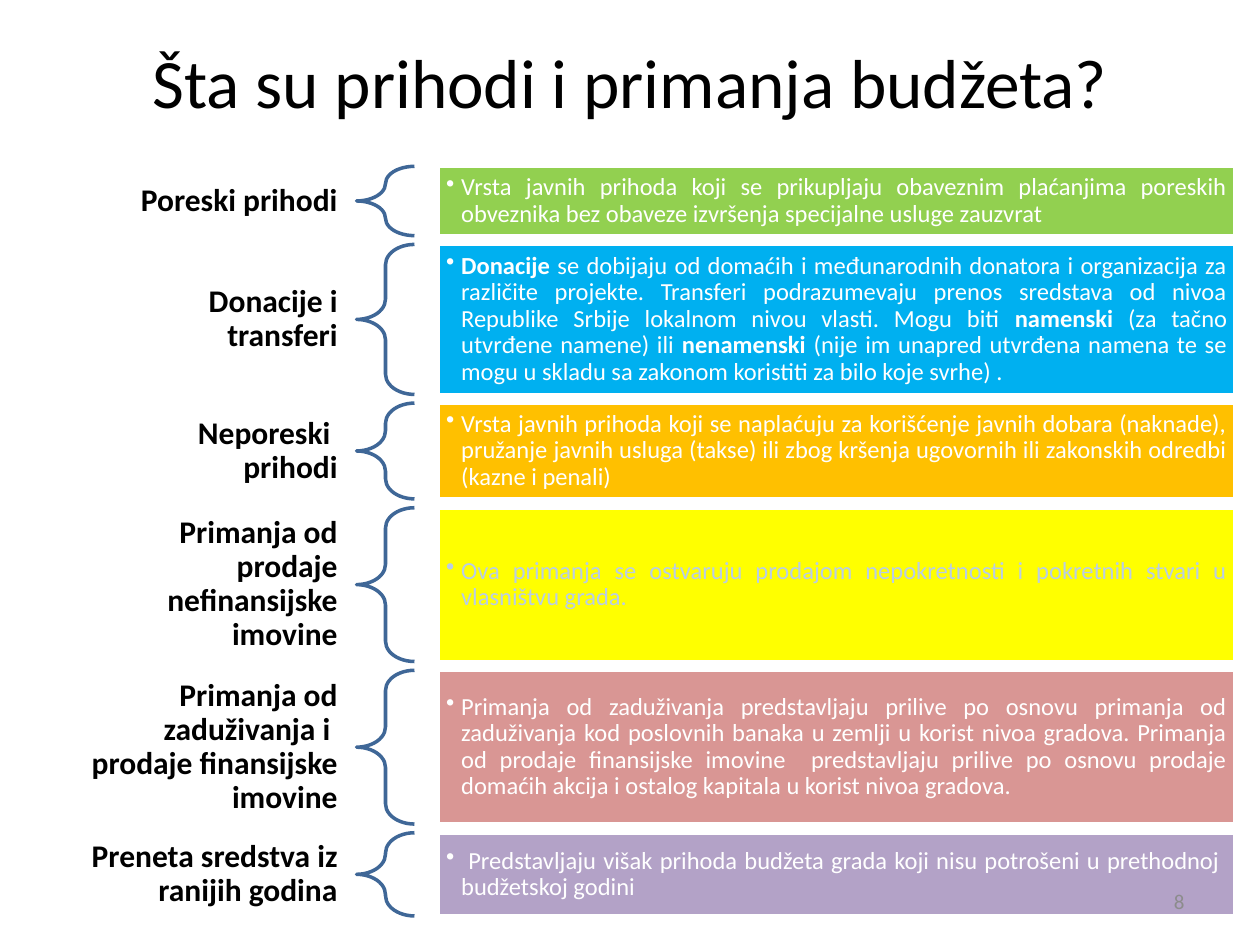
from dataclasses import dataclass

import pptx
import pptx.dml.color
import pptx.enum.shapes
import pptx.enum.text
import pptx.oxml
import pptx.oxml.ns
import pptx.util

Inches = pptx.util.Inches
Pt = pptx.util.Pt
Align = pptx.enum.text.PP_ALIGN
Shape = pptx.enum.shapes.MSO_SHAPE

FONT = "Calibri"
TOP, GAP = 1.32, 0.07
COLORS = {
    "black": "000000", "white": "FFFFFF", "gray": "8C8C8C",
    "brace": "3F6797", "pale": "B9CDE5",
    "green": "92D050", "blue": "00B0F0", "orange": "FFC000",
    "yellow": "FFFF00", "rose": "D99694", "violet": "B3A2C7",
}


@dataclass
class Band:
    label: list[str]
    tall: float  # label height
    high: float  # band height
    fill: str
    runs: list[tuple[str, bool]]
    ink: str = "white"


BANDS = [
    Band(["Poreski prihodi"], 0.39, 0.55, "green", [
        ("Vrsta javnih prihoda koji se prikupljaju obaveznim plaćanjima poreskih "
         "obveznika bez obaveze izvršenja specijalne usluge zauzvrat", False)]),
    Band(["Donacije i", "transferi"], 0.66, 1.19, "blue", [
        ("Donacije", True),
        (" se dobijaju od domaćih i međunarodnih donatora i organizacija za "
         "različite projekte. Transferi podrazumevaju prenos sredstava od nivoa "
         "Republike Srbije lokalnom nivou vlasti. Mogu biti ", False),
        ("namenski", True),
        (" (za tačno utvrđene namene) ili ", False),
        ("nenamenski ", True),
        ("(nije im unapred utvrđena namena te se mogu u skladu sa zakonom "
         "koristiti za bilo koje svrhe) .", False)]),
    Band(["Neporeski ", "prihodi"], 0.66, 0.76, "orange", [
        ("Vrsta javnih prihoda koji se naplaćuju za korišćenje javnih dobara "
         "(naknade), pružanje javnih usluga (takse) ili zbog kršenja ugovornih "
         "ili zakonskih odredbi (kazne i penali)", False)]),
    Band(["Primanja od prodaje nefinansijske imovine"], 1.22, 1.22, "yellow", [
        ("Ova primanja se ostvaruju prodajom nepokretnosti i pokretnih stvari u "
         "vlasništvu grada.", False)], "pale"),
    Band(["Primanja od zaduživanja i  prodaje finansijske imovine"], 1.22, 1.22, "rose", [
        ("Primanja od zaduživanja predstavljaju prilive po osnovu primanja od "
         "zaduživanja kod poslovnih banaka u zemlji u korist nivoa gradova. "
         "Primanja od prodaje finansijske imovine  predstavljaju prilive po "
         "osnovu prodaje domaćih akcija i ostalog kapitala u korist nivoa "
         "gradova.", False)]),
    Band(["Preneta sredstva iz ranijih godina"], 0.66, 0.66, "violet", [
        (" Predstavljaju višak prihoda budžeta grada koji nisu potrošeni u "
         "prethodnoj  budžetskoj godini", False)]),
]


def rgb(name: str) -> pptx.dml.color.RGBColor:
    return pptx.dml.color.RGBColor.from_string(COLORS[name])


def box(left: float, top: float, width: float, height: float) -> list[int]:
    return [Inches(n) for n in (left, top, width, height)]


def setup(frame, align, inset: tuple[float, float] = (0.1, 0.05)):
    """Prepare a text frame and return its first paragraph."""
    frame.word_wrap = True
    frame.auto_size = pptx.enum.text.MSO_AUTO_SIZE.NONE
    frame.vertical_anchor = pptx.enum.text.MSO_ANCHOR.MIDDLE
    frame.margin_left = frame.margin_right = Inches(inset[0])
    frame.margin_top = frame.margin_bottom = Inches(inset[1])
    para = frame.paragraphs[0]
    para.alignment = align
    return para


def write(para, text: str, size: float, ink: str, bold: bool = False) -> None:
    run = para.add_run()
    run.text = text
    run.font.name = FONT
    run.font.size = Pt(size)
    run.font.bold = bold
    run.font.color.rgb = rgb(ink)


def bullet(para) -> None:
    props = para._p.get_or_add_pPr()
    props.set("marL", str(Inches(0.12)))
    props.set("indent", str(Inches(-0.12)))
    mark = pptx.oxml.parse_xml(
        f'<a:buChar {pptx.oxml.ns.nsdecls("a")} char="•"/>')
    props.append(mark)


def outline(shape, ink: str) -> None:
    shape.shadow.inherit = False
    shape.line.color.rgb = rgb(ink)
    shape.line.width = Pt(2)


def draw(shapes, band: Band, top: float) -> None:
    """Draw a label, its brace and the coloured description."""
    shift = (band.high - band.tall) / 2
    label = shapes.add_textbox(*box(0.5, top + shift, 2.32, band.tall))
    para = setup(label.text_frame, Align.RIGHT, (0.14, 0.05))
    para.line_spacing = 0.9
    for i, line in enumerate(band.label):
        if i:
            para.add_line_break()
        write(para, line, 18, "black", True)

    brace = shapes.add_shape(Shape.LEFT_BRACE, *box(2.83, top, 0.46, band.high))
    brace.adjustments[0] = 0.35
    brace.adjustments[1] = 0.5
    brace.fill.background()
    outline(brace, "brace")

    panel = shapes.add_shape(Shape.RECTANGLE, *box(3.48, top, 6.32, band.high))
    panel.fill.solid()
    panel.fill.fore_color.rgb = rgb(band.fill)
    outline(panel, "white")
    para = setup(panel.text_frame, Align.JUSTIFY, (0.06, 0.06))
    para.line_spacing = 0.9
    bullet(para)
    for text, bold in band.runs:
        write(para, text, 14, band.ink, bold)


def main() -> None:
    deck = pptx.Presentation()
    deck.slide_width, deck.slide_height = Inches(10), Inches(7.5)
    slide = deck.slides.add_slide(deck.slide_layouts[5])
    shapes = slide.shapes

    title = shapes.title
    title.left, title.top, title.width, title.height = box(0.5, 0.3, 9, 0.68)
    para = setup(title.text_frame, Align.CENTER)
    write(para, "Šta su prihodi i primanja budžeta?", 39.6, "black")

    top = TOP
    for band in BANDS:
        draw(shapes, band, top)
        top += band.high + GAP

    number = shapes.add_textbox(*box(7.17, 6.95, 2.33, 0.4))
    write(setup(number.text_frame, Align.RIGHT), "8", 12, "gray")
    deck.save("out.pptx")


if __name__ == "__main__":
    main()
